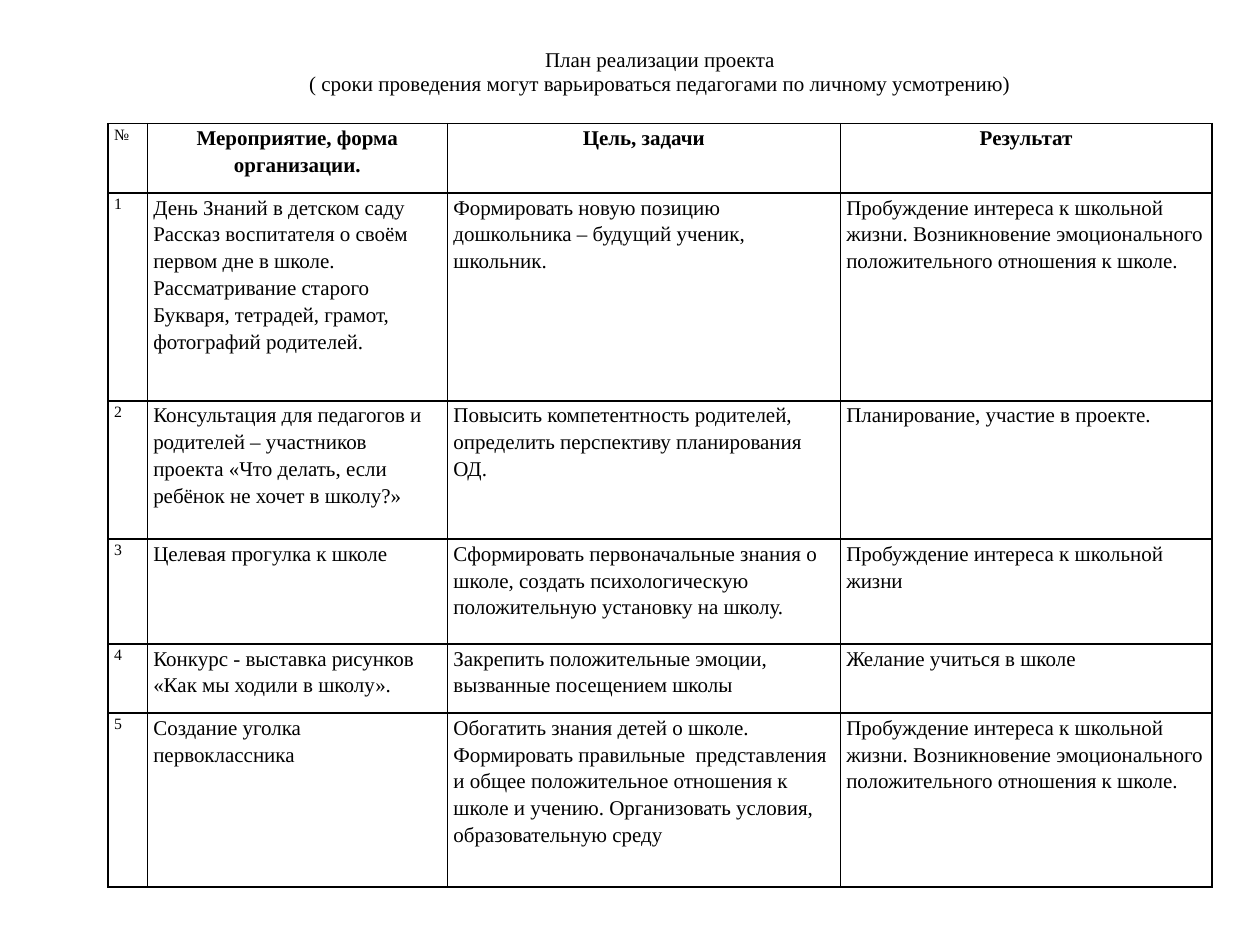
"""Build the slide with the project implementation plan table."""
import pptx
import pptx.dml.color
import pptx.enum.text
import pptx.oxml.ns
import pptx.util
from lxml import etree

Cm, Pt = pptx.util.Cm, pptx.util.Pt
CENTER = pptx.enum.text.PP_ALIGN.CENTER

COLORS = {"ink": "000000"}
FONT = "Times New Roman"
TITLE = "План реализации проекта\n( сроки проведения могут варьироваться педагогами по личному усмотрению)"
HEADINGS = ("№", "Мероприятие, форма организации.", "Цель, задачи", "Результат")
INTEREST = "Пробуждение интереса к школьной жизни"
ATTITUDE = INTEREST + ". Возникновение эмоционального положительного отношения к школе."
ACTIVITIES = [
    ("День Знаний в детском саду\n"
     "Рассказ воспитателя о своём первом дне в школе.\n"
     "Рассматривание старого Букваря, тетрадей, грамот, фотографий родителей.",
     "Формировать новую позицию дошкольника – будущий ученик, школьник.",
     ATTITUDE),
    ("Консультация для педагогов и родителей – участников проекта "
     "«Что делать, если ребёнок не хочет в школу?»",
     "Повысить компетентность родителей, определить перспективу планирования ОД.",
     "Планирование, участие в проекте."),
    ("Целевая прогулка к школе",
     "Сформировать первоначальные знания о школе, создать психологическую "
     "положительную установку на школу.",
     INTEREST),
    ("Конкурс - выставка рисунков «Как мы ходили в школу».",
     "Закрепить положительные эмоции, вызванные посещением школы",
     "Желание учиться в школе"),
    ("Создание уголка первоклассника",
     "Обогатить знания детей о школе. Формировать правильные  представления "
     "и общее положительное отношения к школе и учению. Организовать условия, "
     "образовательную среду",
     ATTITUDE),
]
COLUMN_WIDTHS = (0.79, 6.05, 7.92, 7.49)
ROW_HEIGHTS = (1.5, 1.4, 4.19, 2.79, 2.11, 1.4, 3.5)
LEFT, TOP = 2.18, 0.99


def draw_borders(cell, visible_sides):
    properties = cell._tc.get_or_add_tcPr()
    for side in "LRTB":
        border = etree.SubElement(properties, pptx.oxml.ns.qn(f"a:ln{side}"), w=str(Pt(1)))
        if side in visible_sides:
            fill = etree.SubElement(border, pptx.oxml.ns.qn("a:solidFill"))
            etree.SubElement(fill, pptx.oxml.ns.qn("a:srgbClr"), val=COLORS["ink"])
        else:
            etree.SubElement(border, pptx.oxml.ns.qn("a:noFill"))


def write(cell, text, size, bold, centered, spacing):
    cell.text = text
    for paragraph in cell.text_frame.paragraphs:
        paragraph.line_spacing = spacing
        if centered:
            paragraph.alignment = CENTER
        paragraph.font.name = FONT
        paragraph.font.size = Pt(size)
        paragraph.font.bold = bold
        paragraph.font.color.rgb = pptx.dml.color.RGBColor.from_string(COLORS["ink"])


def main():
    presentation = pptx.Presentation()
    presentation.slide_width, presentation.slide_height = Cm(25.4), Cm(19.05)
    slide = presentation.slides.add_slide(presentation.slide_layouts[6])

    plan = slide.shapes.add_table(
        len(ROW_HEIGHTS), len(COLUMN_WIDTHS), Cm(LEFT), Cm(TOP),
        Cm(sum(COLUMN_WIDTHS)), Cm(sum(ROW_HEIGHTS))).table
    plan.first_row = plan.horz_banding = False
    for column, width in zip(plan.columns, COLUMN_WIDTHS):
        column.width = Cm(width)
    for row, height in zip(plan.rows, ROW_HEIGHTS):
        row.height = Cm(height)

    for r, row in enumerate(plan.rows):
        for cell in row.cells:
            draw_borders(cell, "LRTB" if r else "B")
            cell.fill.background()
            cell.margin_left = cell.margin_right = Cm(0.12)
            cell.margin_top = cell.margin_bottom = 0

    plan.cell(0, 0).merge(plan.cell(0, len(COLUMN_WIDTHS) - 1))
    write(plan.cell(0, 0), TITLE, 12, False, True, 1.0)

    numbered = [(str(n), *activity) for n, activity in enumerate(ACTIVITIES, 1)]
    for r, texts in enumerate([HEADINGS, *numbered], 1):
        for c, text in enumerate(texts):
            heading = r == 1 and c > 0
            write(plan.cell(r, c), text, 12 if c else 9, heading, heading, 1.15)

    presentation.save("out.pptx")


if __name__ == "__main__":
    main()
